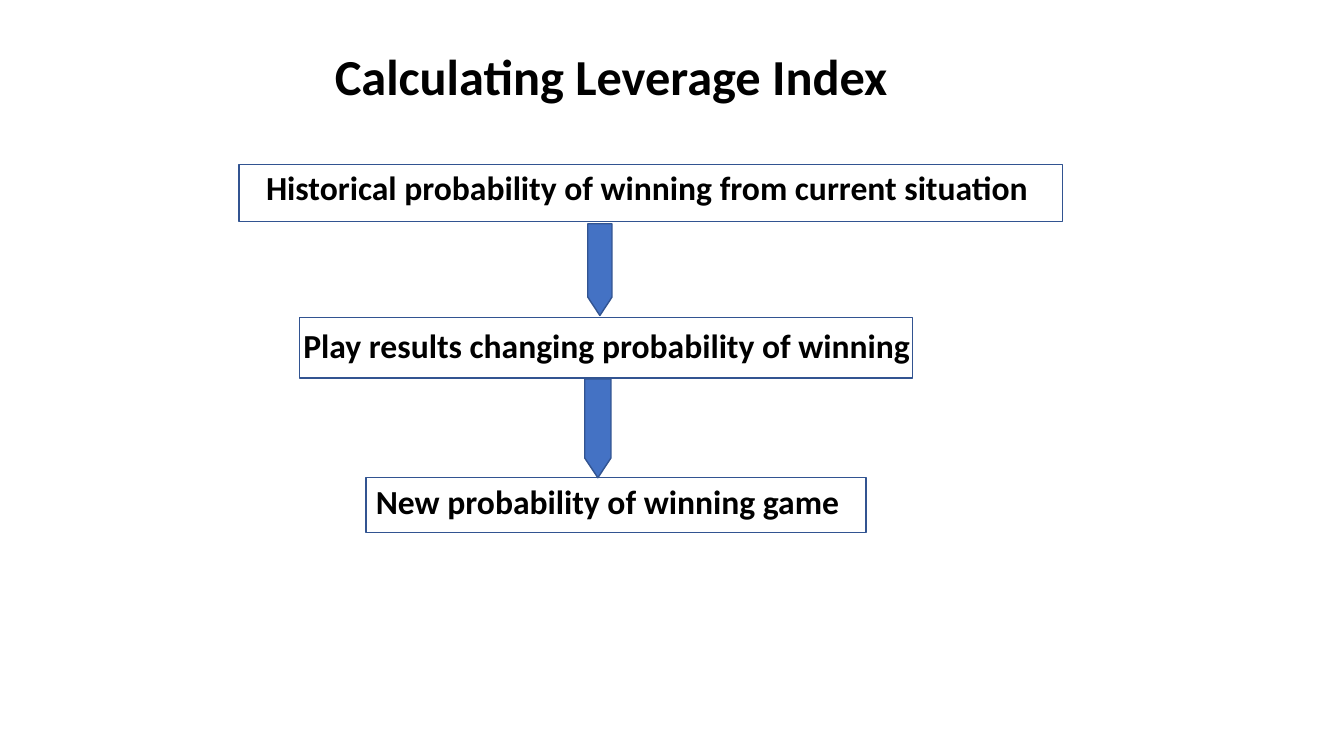
from pptx import Presentation
from pptx.dml.color import RGBColor
from pptx.enum.shapes import MSO_SHAPE as Preset
from pptx.enum.text import MSO_ANCHOR as Anchor, MSO_AUTO_SIZE as AutoSize, PP_ALIGN as Align
from pptx.util import Inches, Pt

# Content: wording, label place and frame place (left, top, width, height)
TITLE = ("Calculating Leverage Index", (3.22, 0.4, 6.27, 0.71))
STEPS = [
    ("Historical probability of winning from current situation",
     (2.54, 1.61, 8.35, 0.5), (2.37, 1.63, 8.17, 0.57)),
    ("Play results changing probability of winning",
     (2.91, 3.17, 6.26, 0.5), (2.97, 3.15, 6.08, 0.6)),
    ("New probability of winning game",
     (3.63, 4.72, 5.63, 0.5), (3.63, 4.74, 4.96, 0.54)),
]
ARROWS = [(5.83, 2.22, 0.24, 0.91), (5.8, 3.76, 0.26, 0.98)]

COLORS = {"text": "000000", "line": "325491", "arrow": "4472C4"}
FONT = {"name": "Calibri", "bold": True}
FRAME = {"word_wrap": True, "auto_size": AutoSize.NONE, "vertical_anchor": Anchor.TOP,
         "margin_left": Inches(0.1), "margin_right": Inches(0.1),
         "margin_top": Inches(0.05), "margin_bottom": Inches(0.05)}
PARAGRAPH = {"alignment": Align.LEFT, "line_spacing": 1.0}


def color(name):
    return RGBColor.from_string(COLORS[name])


def set_all(target, values):
    for name, value in values.items():
        setattr(target, name, value)


def write(shape, text, size):
    set_all(shape.text_frame, FRAME)
    paragraph = shape.text_frame.paragraphs[0]
    set_all(paragraph, PARAGRAPH)
    run = paragraph.add_run()
    run.text = text
    set_all(run.font, {**FONT, "size": Pt(size)})
    run.font.color.rgb = color("text")


def add_outlined(slide, preset, place, fill=None):
    shape = slide.shapes.add_shape(preset, *map(Inches, place))
    shape.shadow.inherit = False
    if fill:
        shape.fill.solid()
        shape.fill.fore_color.rgb = color(fill)
    else:
        shape.fill.background()
    shape.line.color.rgb = color("line")
    shape.line.width = Pt(1)


def main():
    presentation = Presentation()
    presentation.slide_width = Inches(13.33)
    presentation.slide_height = Inches(7.5)
    slide = presentation.slides.add_slide(presentation.slide_layouts[5])

    # Title
    text, place = TITLE
    title = slide.shapes.title
    set_all(title, dict(zip(("left", "top", "width", "height"), map(Inches, place))))
    write(title, text, 36)

    # Steps: a label inside a frame
    for text, label_place, frame_place in STEPS:
        write(slide.shapes.add_textbox(*map(Inches, label_place)), text, 24)
        add_outlined(slide, Preset.FLOWCHART_PROCESS, frame_place)

    # Arrows between the steps
    for place in ARROWS:
        add_outlined(slide, Preset.FLOWCHART_OFFPAGE_CONNECTOR, place, "arrow")

    presentation.save("out.pptx")


if __name__ == "__main__":
    main()
